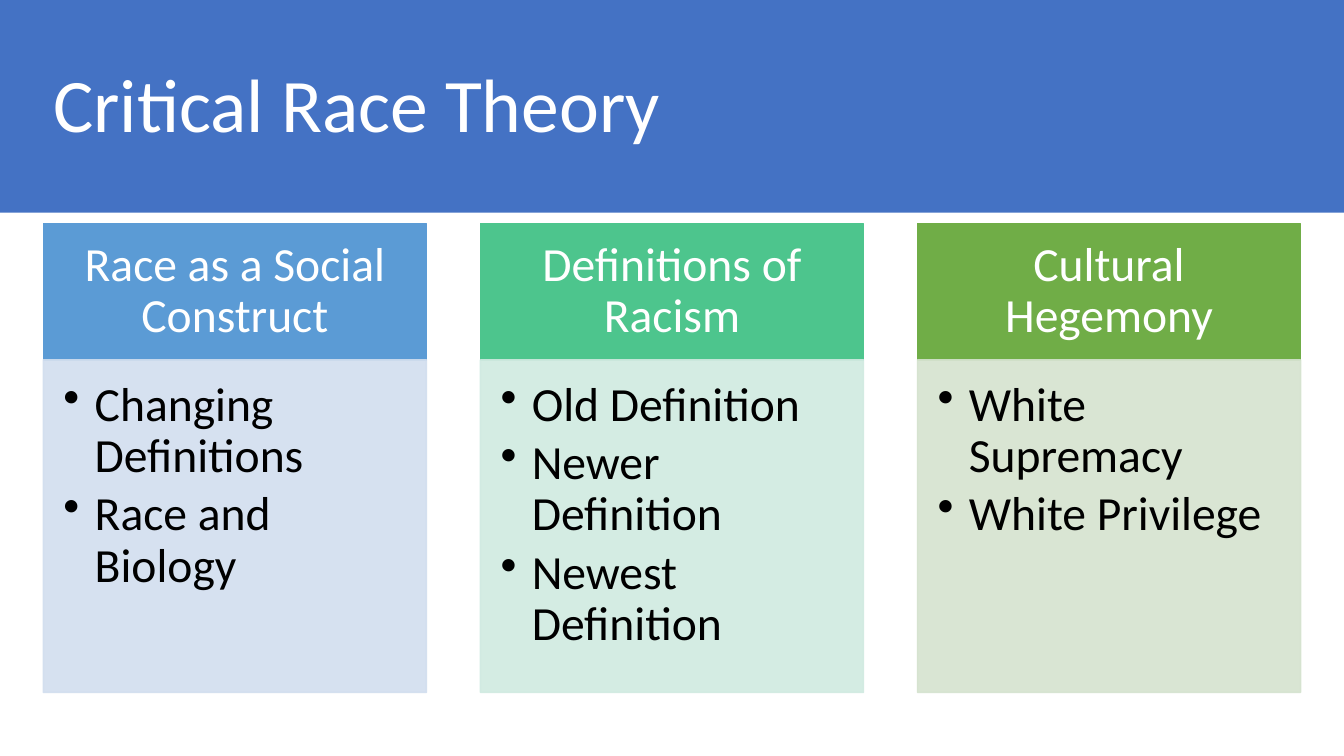
from lxml import etree
from pptx import Presentation
from pptx.dml.color import RGBColor
from pptx.enum.shapes import MSO_SHAPE
from pptx.enum.text import MSO_ANCHOR, PP_ALIGN
from pptx.oxml.ns import qn
from pptx.util import Inches, Pt

COLORS = {
    "banner": "4472C4", "light": "FFFFFF", "dark": "000000",
    "blue": "5B9BD5", "pale blue": "D2DEEF",
    "green": "4DC58D", "pale green": "D0EAE1",
    "olive": "70AD47", "pale olive": "D5E3CF",
}
COLUMNS = [
    ("blue", "Race as a Social Construct", ["Changing Definitions", "Race and Biology"]),
    ("green", "Definitions of Racism", ["Old Definition", "Newer Definition", "Newest Definition"]),
    ("olive", "Cultural Hegemony", ["White Supremacy", "White Privilege"]),
]
MARGIN, COLUMN_WIDTH, COLUMN_STEP = 0.43, 3.8, 4.335
HEADER_TOP, HEADER_HEIGHT, PANEL_HEIGHT = 2.22, 1.35, 3.3


def add_box(left, top, width, height, color, insets, anchor):
    """Add a filled rectangle with a matching outline and text margins."""
    box = page.shapes.add_shape(
        MSO_SHAPE.RECTANGLE, Inches(left), Inches(top), Inches(width), Inches(height))
    box.shadow.inherit = False
    box.fill.solid()
    box.fill.fore_color.rgb = RGBColor.from_string(COLORS[color])
    box.line.color.rgb = RGBColor.from_string(COLORS[color])
    box.line.width = Pt(1)
    frame = box.text_frame
    frame.word_wrap = True
    frame.vertical_anchor = anchor
    (frame.margin_left, frame.margin_top,
     frame.margin_right, frame.margin_bottom) = map(Inches, insets)
    return box


def style_paragraph(para, text, size, color, align, space_after=0):
    para.text = text
    para.alignment = align
    para.line_spacing = 0.9
    para.space_after = Pt(space_after)
    para.font.name = "Calibri"
    para.font.size = Pt(size)
    para.font.color.rgb = RGBColor.from_string(COLORS[color])


deck = Presentation()
deck.slide_width, deck.slide_height = Inches(13.33), Inches(7.5)
page = deck.slides.add_slide(deck.slide_layouts[6])

# Banner across the top
banner = add_box(0, -0.01, 13.33, 2.12, "banner", (0, 0, 0, 0), MSO_ANCHOR.MIDDLE)
banner.line.fill.background()

# Title
title = page.shapes.add_textbox(Inches(MARGIN), Inches(0.35), Inches(12.48), Inches(1.45))
title.text_frame.word_wrap = True
title.text_frame.vertical_anchor = MSO_ANCHOR.MIDDLE
style_paragraph(title.text_frame.paragraphs[0], "Critical Race Theory", 54, "light", PP_ALIGN.LEFT)

# Three columns, each a header over a bulleted panel
for index, (color, heading, points) in enumerate(COLUMNS):
    left = MARGIN + index * COLUMN_STEP
    header = add_box(left, HEADER_TOP, COLUMN_WIDTH, HEADER_HEIGHT, color,
                     (0.26, 0.15, 0.26, 0.15), MSO_ANCHOR.MIDDLE)
    style_paragraph(header.text_frame.paragraphs[0], heading, 34, "light", PP_ALIGN.CENTER)

    panel = add_box(left, HEADER_TOP + HEADER_HEIGHT, COLUMN_WIDTH, PANEL_HEIGHT,
                    f"pale {color}", (0.2, 0.2, 0.26, 0.3), MSO_ANCHOR.TOP)
    # Fill and outline are 90% opaque
    for tint in panel.fill._xPr.iter(qn("a:srgbClr")):
        etree.SubElement(tint, qn("a:alpha"), val="90000")

    frame = panel.text_frame
    for number, point in enumerate(points):
        para = frame.add_paragraph() if number else frame.paragraphs[0]
        style_paragraph(para, point, 34, "dark", PP_ALIGN.LEFT, space_after=5)
        # Hanging bullet
        properties = para._p.get_or_add_pPr()
        properties.set("marL", str(Inches(0.31)))
        properties.set("indent", str(-Inches(0.31)))
        bullet = etree.Element(qn("a:buChar"), char="•")
        properties.find(qn("a:defRPr")).addprevious(bullet)

deck.save("out.pptx")
